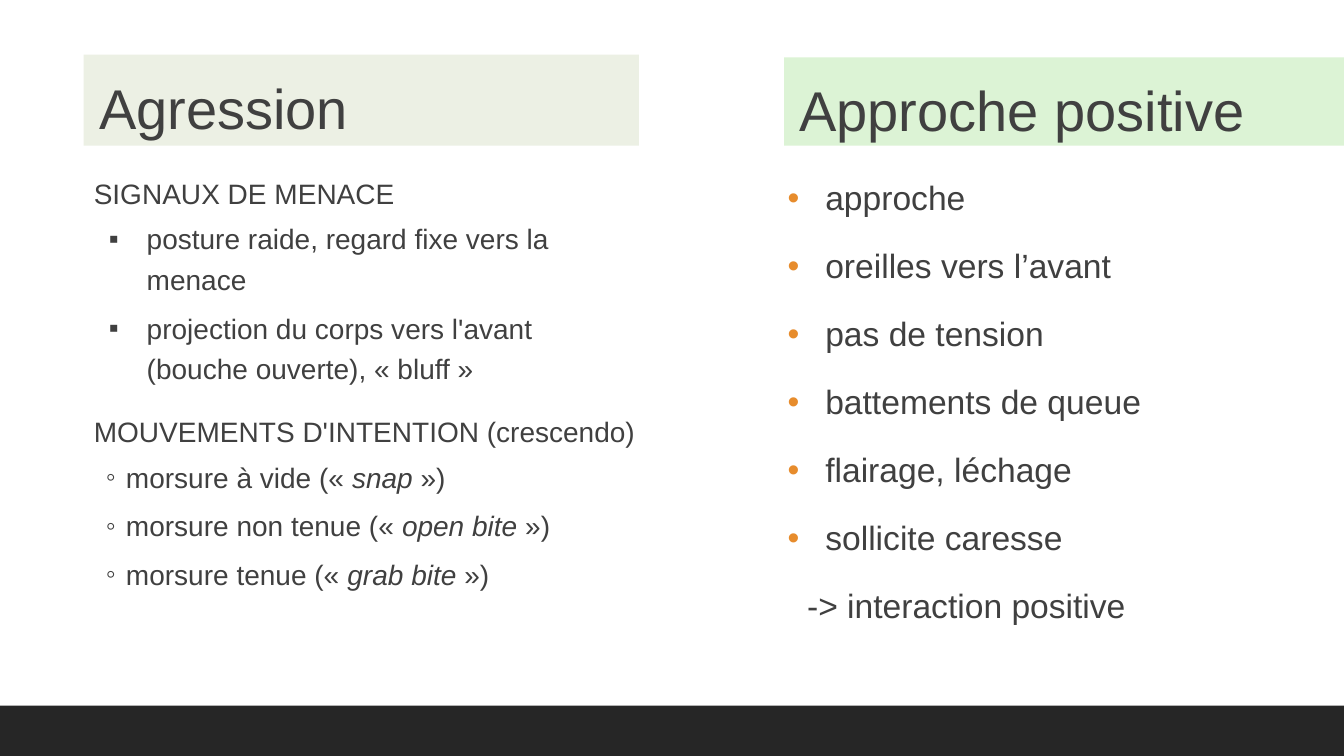
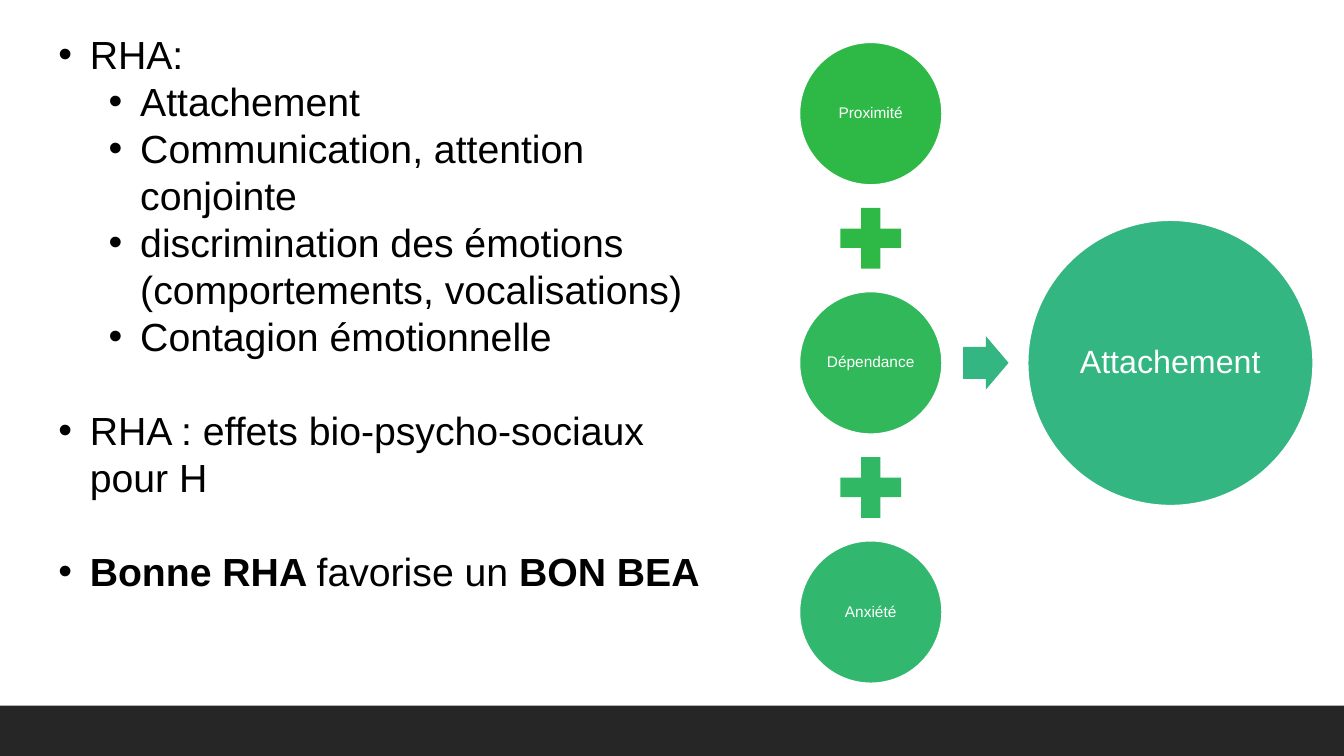
from dataclasses import dataclass

from lxml import etree
from pptx import Presentation
from pptx import util as u
from pptx.dml.color import RGBColor
from pptx.enum import shapes, text
from pptx.oxml import ns

FONT = "Arial"
BLACK = RGBColor(0x00, 0x00, 0x00)
WHITE = RGBColor(0xFF, 0xFF, 0xFF)
DARK_GREY = RGBColor(0x40, 0x40, 0x40)
FOOTER_GREY = RGBColor(0x26, 0x26, 0x26)
PALE_OLIVE = RGBColor(0xEC, 0xF0, 0xE4)
PALE_GREEN = RGBColor(0xDC, 0xF3, 0xD5)
ORANGE = RGBColor(0xE7, 0x8C, 0x2C)
GREEN = RGBColor(0x2E, 0xB9, 0x47)
MID_GREEN = RGBColor(0x30, 0xB8, 0x5B)
SEA_GREEN = RGBColor(0x30, 0xB8, 0x65)
COOL_GREEN = RGBColor(0x31, 0xB7, 0x6E)
TEAL = RGBColor(0x33, 0xB6, 0x81)

WIDTH, HEIGHT = 960, 540
FOOTER_HEIGHT = 36
TITLE_ONLY, BLANK = 5, 6


@dataclass
class ParagraphStyle:
    """Paragraph layout; lengths are in points."""
    margin: float = 0
    hang: float = 0
    bullet: str = ""
    bullet_color: RGBColor = None
    spacing: float = 1.2
    before: float = 12
    after: float = 2


HEADING = ParagraphStyle(margin=11)
SUBHEAD = ParagraphStyle(margin=7.2)
SQUARE = ParagraphStyle(45, 27, "▪", before=2, after=4)
RING = ParagraphStyle(30.2, 14.4, "◦", before=2, after=4)
DOT = ParagraphStyle(27, 27, "•", ORANGE)
CONCLUSION = ParagraphStyle(margin=14)
POINT = ParagraphStyle(22.5, 22.5, "•", spacing=1, before=0, after=0)
SPACED_POINT = ParagraphStyle(22.5, 22.5, "•", spacing=1, before=33.6, after=0)
SUBPOINT = ParagraphStyle(58.5, 22.5, "•", spacing=1, before=0, after=0)


class Deck:
    """Holds the presentation, its style and the current slide."""

    def __init__(self):
        self.presentation = Presentation()
        self.presentation.slide_width = u.Pt(WIDTH)
        self.presentation.slide_height = u.Pt(HEIGHT)
        self.slide = None

    def new_slide(self, layout):
        layouts = self.presentation.slide_layouts
        self.slide = self.presentation.slides.add_slide(layouts[layout])
        self.shape(shapes.MSO_SHAPE.RECTANGLE, 0, HEIGHT - FOOTER_HEIGHT,
                   WIDTH, FOOTER_HEIGHT, FOOTER_GREY)

    def shape(self, kind, left, top, width, height, color):
        shape = self.slide.shapes.add_shape(
            kind, u.Pt(left), u.Pt(top), u.Pt(width), u.Pt(height))
        shape.shadow.inherit = False
        shape.fill.solid()
        shape.fill.fore_color.rgb = color
        shape.line.fill.background()
        return shape

    def title(self, title, left, top, width, height, color):
        shape = self.slide.shapes.title
        shape.left, shape.top = u.Pt(left), u.Pt(top)
        shape.width, shape.height = u.Pt(width), u.Pt(height)
        shape.fill.solid()
        shape.fill.fore_color.rgb = color
        self.fill_text(shape, [(HEADING, title)], 40, DARK_GREY)

    def heading(self, heading, left, top, width, height, color):
        shape = self.shape(shapes.MSO_SHAPE.RECTANGLE, left, top, width, height, color)
        self.fill_text(shape, [(HEADING, heading)], 40, DARK_GREY)

    def text_box(self, items, left, top, width, height, size, color,
                 side_inset=0, emphasis="italic"):
        shape = self.slide.shapes.add_textbox(
            u.Pt(left), u.Pt(top), u.Pt(width), u.Pt(height))
        self.fill_text(shape, items, size, color, side_inset, emphasis)

    def circle(self, label, center_x, center_y, diameter, size, color):
        shape = self.shape(shapes.MSO_SHAPE.OVAL, center_x - diameter / 2,
                           center_y - diameter / 2, diameter, diameter, color)
        shape.line.color.rgb = WHITE
        shape.line.width = u.Pt(1.25)
        label_style = ParagraphStyle(spacing=0.9, before=0, after=0)
        self.fill_text(shape, [(label_style, label)], size, WHITE)
        frame = shape.text_frame
        frame.margin_top = frame.margin_bottom = 0
        frame.vertical_anchor = text.MSO_ANCHOR.MIDDLE
        frame.paragraphs[0].alignment = text.PP_ALIGN.CENTER

    def fill_text(self, shape, items, size, color, side_inset=0, emphasis="italic"):
        """Fill a shape with paragraphs; *asterisks* enclose emphasised runs."""
        frame = shape.text_frame
        frame.word_wrap = True
        frame.auto_size = text.MSO_AUTO_SIZE.NONE
        frame.vertical_anchor = text.MSO_ANCHOR.TOP
        frame.margin_left = frame.margin_right = u.Pt(side_inset)
        frame.margin_top = frame.margin_bottom = u.Pt(3.6)
        for index, (style, content) in enumerate(items):
            paragraph = frame.add_paragraph() if index else frame.paragraphs[0]
            self.format_paragraph(paragraph, style)
            for position, part in enumerate(content.split("*")):
                if not part:
                    continue
                run = paragraph.add_run()
                run.text = part
                run.font.name = FONT
                run.font.size = u.Pt(size)
                run.font.color.rgb = color
                if position % 2:
                    run.font.italic = emphasis == "italic"
                    run.font.bold = emphasis == "bold"

    def format_paragraph(self, paragraph, style):
        paragraph.alignment = text.PP_ALIGN.LEFT
        paragraph.line_spacing = style.spacing
        paragraph.space_before = u.Pt(style.before)
        paragraph.space_after = u.Pt(style.after)
        properties = paragraph._p.get_or_add_pPr()
        properties.set("marL", str(int(u.Pt(style.margin))))
        properties.set("indent", str(-int(u.Pt(style.hang))))
        if style.bullet_color is not None:
            bullet_color = etree.SubElement(properties, ns.qn("a:buClr"))
            etree.SubElement(bullet_color, ns.qn("a:srgbClr"), val=str(style.bullet_color))
        if style.bullet:
            etree.SubElement(properties, ns.qn("a:buFont"), typeface=FONT)
            etree.SubElement(properties, ns.qn("a:buChar"), char=style.bullet)
        else:
            etree.SubElement(properties, ns.qn("a:buNone"))


def build_behaviours(deck):
    deck.new_slide(TITLE_ONLY)

    # Aggression column
    deck.title("Agression", 59.8, 39, 396.5, 65, PALE_OLIVE)
    deck.text_box([
        (SUBHEAD, "SIGNAUX DE MENACE"),
        (SQUARE, "posture raide, regard fixe vers la menace"),
        (SQUARE, "projection du corps vers l'avant (bouche ouverte), « bluff »"),
        (SUBHEAD, "MOUVEMENTS D'INTENTION (crescendo)"),
        (RING, "morsure à vide (« *snap* »)"),
        (RING, "morsure non tenue (« *open bite* »)"),
        (RING, "morsure tenue (« *grab bite* »)"),
    ], 59.8, 117.4, 395.5, 310, 20, DARK_GREY)

    # Positive approach column
    deck.heading("Approche positive", 560, 41, 400, 63, PALE_GREEN)
    signals = ["approche", "oreilles vers l’avant", "pas de tension",
               "battements de queue", "flairage, léchage", "sollicite caresse"]
    deck.text_box([(DOT, signal) for signal in signals]
                  + [(CONCLUSION, "-> interaction positive")],
                  562.5, 117.4, 397.5, 340, 24, DARK_GREY)


def build_attachment(deck):
    deck.new_slide(BLANK)

    # Sum of factors leading to attachment
    center_x, first_y, step, diameter = 622, 81.2, 178, 102
    middle_y = first_y + step
    plus, arrow_height = 59, 38.2
    factors = [("Proximité", GREEN), ("Dépendance", MID_GREEN), ("Anxiété", COOL_GREEN)]
    for index, (label, color) in enumerate(factors):
        deck.circle(label, center_x, first_y + index * step, diameter, 11, color)
    for index, color in enumerate([GREEN, SEA_GREEN]):
        plus_y = first_y + (index + 0.5) * step
        deck.shape(shapes.MSO_SHAPE.MATH_PLUS, center_x - plus / 2,
                   plus_y - plus / 2, plus, plus, color)
    arrow = deck.shape(shapes.MSO_SHAPE.RIGHT_ARROW, 688, middle_y - arrow_height / 2,
                       32.4, arrow_height, TEAL)
    arrow.adjustments[0] = 0.6
    deck.circle("Attachement", 836, middle_y, 204, 23, TEAL)

    # Key points
    deck.text_box([
        (POINT, "RHA:"),
        (SUBPOINT, "Attachement"),
        (SUBPOINT, "Communication, attention conjointe"),
        (SUBPOINT, "discrimination des émotions (comportements, vocalisations)"),
        (SUBPOINT, "Contagion émotionnelle"),
        (SPACED_POINT, "RHA : effets bio-psycho-sociaux pour H"),
        (SPACED_POINT, "*Bonne RHA *favorise un *BON BEA*"),
    ], 34.6, 18, 489.6, 448.6, 28, BLACK, side_inset=7.2, emphasis="bold")


def main():
    deck = Deck()
    build_behaviours(deck)
    build_attachment(deck)
    deck.presentation.save("out.pptx")


if __name__ == "__main__":
    main()
